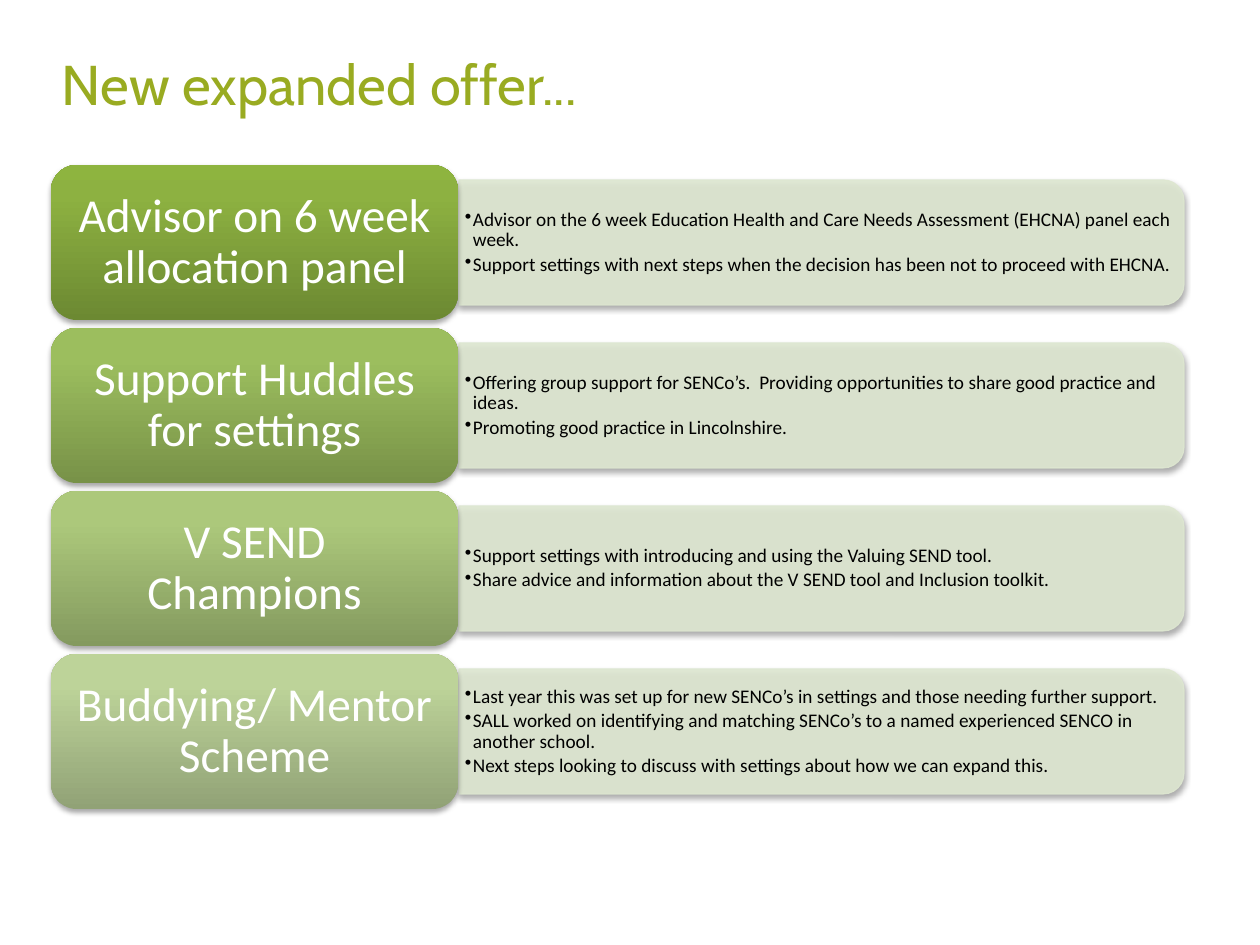
from copy import deepcopy

from lxml.etree import SubElement
from pptx import Presentation
from pptx.dml.color import RGBColor
from pptx.enum.shapes import MSO_SHAPE as SHAPE
from pptx.enum.text import MSO_ANCHOR as ANCHOR, PP_ALIGN as ALIGN
from pptx.oxml.ns import qn
from pptx.util import Emu, Pt

PX = 914400 / 126


def px(n):
    return Emu(round(n * PX))


def rgb(value):
    return RGBColor.from_string(value)


def write(tf, lines, size, color, font="Calibri", align=ALIGN.LEFT,
          inset=(13, 6), spacing=1.0, after=0, bullet=False):
    tf.word_wrap = True
    tf.vertical_anchor = ANCHOR.MIDDLE
    tf.margin_left = tf.margin_right = px(inset[0])
    tf.margin_top = tf.margin_bottom = px(inset[1])
    for i, line in enumerate(lines):
        p = tf.add_paragraph() if i else tf.paragraphs[0]
        p.alignment = align
        p.line_spacing = spacing
        p.space_after = Pt(after)
        if bullet:
            pPr = p._p.get_or_add_pPr()
            pPr.set("marL", str(px(8)))
            pPr.set("indent", str(px(-8)))
            SubElement(pPr, qn("a:buChar"), char="•")
        r = p.add_run()
        r.text = line
        r.font.size = Pt(size)
        r.font.name = font
        r.font.color.rgb = rgb(color)


class Deck:
    title_color = "99AB21"
    panel_color = "DEE7D1"
    card_text = "FFFFFF"
    panel_text = "000000"

    def __init__(self, width, height):
        self.prs = Presentation()
        self.prs.slide_width, self.prs.slide_height = px(width), px(height)
        self.s = self.prs.slides.add_slide(self.prs.slide_layouts[6])

    def shape(self, kind, *box):
        sp = self.s.shapes.add_shape(kind, *map(px, box))
        sp.shadow.inherit = False
        effects = sp._element.spPr.find(qn("a:effectLst"))
        shadow = SubElement(effects, qn("a:outerShdw"), blurRad=str(Pt(3.1)),
                            dist=str(Pt(1.8)), dir="5400000", rotWithShape="0")
        color = SubElement(shadow, qn("a:srgbClr"), val="000000")
        SubElement(color, qn("a:alpha"), val="35000")
        return sp

    def text(self, box, lines, **style):
        sp = self.s.shapes.add_textbox(*map(px, box))
        write(sp.text_frame, lines, **style)

    def title(self, text, *box):
        self.text(box, [text], size=32, color=self.title_color, font="Cabin")

    def panel(self, lines, x, y, w, h):
        left, top = x + (w - h) / 2, y + (h - w) / 2
        sp = self.shape(SHAPE.ROUND_2_SAME_RECTANGLE, left, top, h, w)
        sp.rotation = 90
        sp.fill.solid()
        sp.fill.fore_color.rgb = rgb(self.panel_color)
        sp.line.color.rgb = rgb(self.panel_color)
        sp.line.width = Pt(0.75)
        for color in sp._element.spPr.iter(qn("a:srgbClr")):
            if color.get("val") == self.panel_color:
                SubElement(color, qn("a:alpha"), val="90000")
        self.text((x, y + 6, w - 6, h - 12), lines, size=11,
                  color=self.panel_text, inset=(6, 3), spacing=0.9,
                  after=2, bullet=True)

    def card(self, text, colors, *box):
        sp = self.shape(SHAPE.ROUNDED_RECTANGLE, *box)
        sp.line.fill.background()
        sp.fill.gradient()
        sp.fill.gradient_angle = 90
        stops = sp._element.spPr.find(".//" + qn("a:gsLst"))
        stops.append(deepcopy(stops[-1]))
        for stop, at, color in zip(sp.fill.gradient_stops, (0, 0.8, 1), colors):
            stop.position = at
            stop.color.rgb = rgb(color)
        write(sp.text_frame, [text], size=27, color=self.card_text,
              align=ALIGN.CENTER, inset=(14, 8), spacing=0.9)


OFFERS = [
    ("Advisor on 6 week allocation panel", ("6C8932", "8DB141", "8EB43F"), [
        "Advisor on the 6 week Education Health and Care Needs Assessment (EHCNA) panel each week.",
        "Support settings with next steps when the decision has been not to proceed with EHCNA.",
    ]),
    ("Support Huddles for settings", ("789248", "9CBE5E", "9EC05C"), [
        "Offering group support for SENCo’s.  Providing opportunities to share good practice and ideas.",
        "Promoting good practice in Lincolnshire.",
    ]),
    ("V SEND Champions", ("849A5F", "ACC87B", "ADCB7B"), [
        "Support settings with introducing and using the Valuing SEND tool.",
        "Share advice and information about the V SEND tool and Inclusion toolkit.",
    ]),
    ("Buddying/ Mentor Scheme", ("91A276", "BDD399", "BED599"), [
        "Last year this was set up for new SENCo’s in settings and those needing further support.",
        "SALL worked on identifying and matching SENCo’s to a named experienced SENCO in another school.",
        "Next steps looking to discuss with settings about how we can expand this.",
    ]),
]
TOP, PITCH = 165, 163


def main():
    deck = Deck(1260, 945)
    deck.title("New expanded offer...", 49, 28, 1134, 110)
    for row, (name, colors, points) in enumerate(OFFERS):
        y = TOP + row * PITCH
        deck.panel(points, 459, y + 15, 725, 125)
        deck.card(name, colors, 51, y, 407, 155)
    deck.prs.save("out.pptx")


if __name__ == "__main__":
    main()
